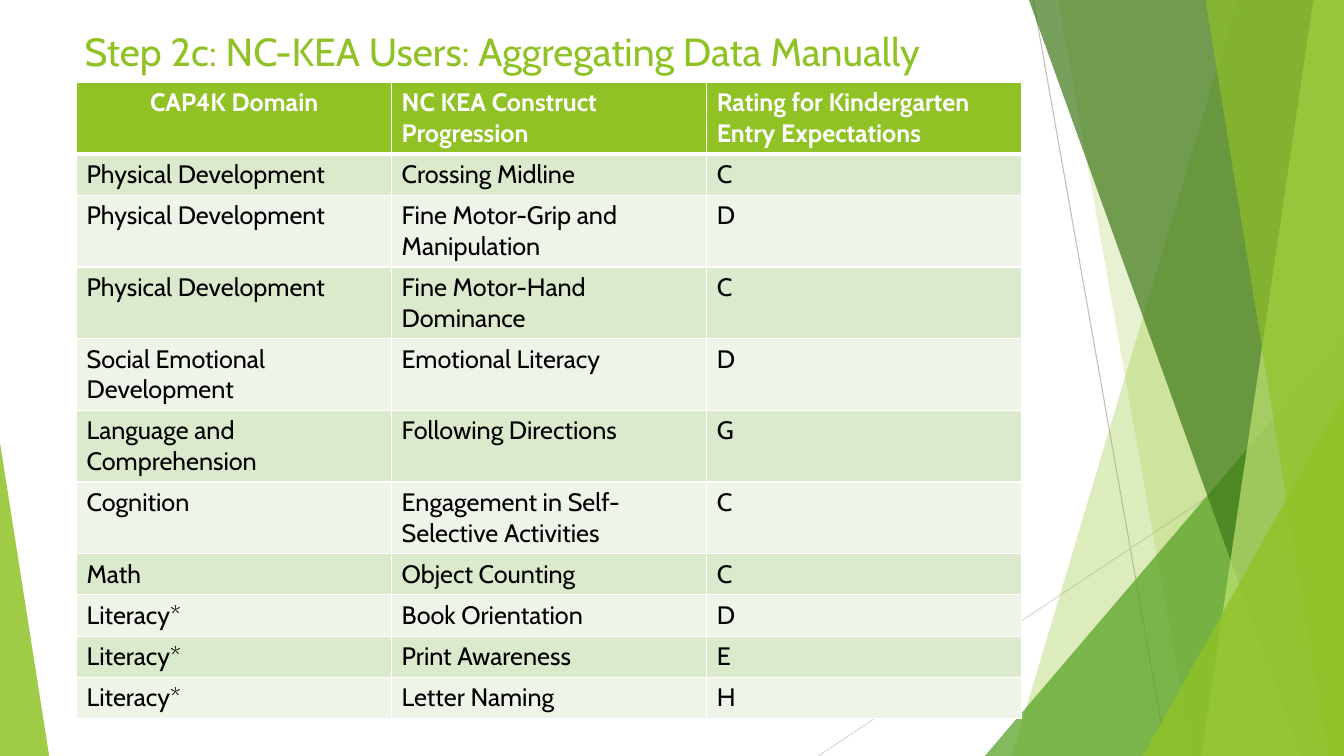
from pptx import Presentation
from pptx.dml.color import RGBColor
from pptx.enum.shapes import MSO_CONNECTOR, MSO_SHAPE
from pptx.enum.text import MSO_ANCHOR, MSO_AUTO_SIZE, PP_ALIGN
from pptx.oxml import parse_xml
from pptx.oxml.ns import nsdecls
from pptx.oxml.xmlchemy import OxmlElement
from pptx.util import Cm, Pt

THEME = {
    "font": "Cabin",
    "title_size": 28,
    "table_size": 18,
    "green": "90C226",
    "mid_green": "54A021",
    "dark_green": "3F7819",
    "light_green": "C0E474",
    "odd_row": "DBE9CD",
    "even_row": "EEF4E8",
    "white": "FFFFFF",
    "black": "000000",
    "line": "BFBFBF",
    "pale_line": "D9D9D9",
}
WIDTH, HEIGHT = 33.87, 19.05


def format_text(paragraph, size, color, bold=False):
    for run in paragraph.runs:
        run.font.name = THEME["font"]
        run.font.size = Pt(THEME[size])
        run.font.bold = bold
        run.font.color.rgb = RGBColor.from_string(THEME[color])


def paint(shape, color, opacity):
    shape.shadow.inherit = False
    shape.line.fill.background()
    shape.fill.solid()
    shape.fill.fore_color.rgb = RGBColor.from_string(THEME[color])
    alpha = OxmlElement("a:alpha")
    alpha.set("val", str(opacity * 1000))
    shape.fill._xPr.solidFill[0].append(alpha)


presentation = Presentation()
presentation.slide_width = Cm(WIDTH)
presentation.slide_height = Cm(HEIGHT)
slide = presentation.slides.add_slide(presentation.slide_layouts[5])
shapes = slide.shapes

rays = [
    (26.04, 0, 29.41, HEIGHT, "line"),
    (WIDTH, 10.24, 20.62, HEIGHT, "pale_line"),
]
for start_x, start_y, end_x, end_y, color in rays:
    ray = shapes.add_connector(
        MSO_CONNECTOR.STRAIGHT, Cm(start_x), Cm(start_y), Cm(end_x), Cm(end_y))
    ray.line.color.rgb = RGBColor.from_string(THEME[color])
    ray.line.width = Pt(0.75)
    ray.element.spPr.append(OxmlElement("a:effectLst"))

facets = [
    ("band", (31.19, 25.5), "green", 30),
    ("band", (26.67, 30.05), "green", 20),
    ("triangle", (24.82, 8.46, 9.05, 1), "mid_green", 72),
    ("band", (25.93, 32.79), "dark_green", 70),
    ("band", (33.1, 30.28), "light_green", 70),
    ("band", (30.38, 33.48), "green", 65),
    ("triangle", (28.8, 9.98, 5.07, 1), "green", 80),
    ("triangle", (0, 11.15, 1.24, 0), "green", 85),
]
for kind, geometry, color, opacity in facets:
    if kind == "band":
        top_x, bottom_x = geometry
        builder = shapes.build_freeform(Cm(top_x), Cm(0))
        builder.add_line_segments(
            [(Cm(WIDTH), Cm(0)), (Cm(WIDTH), Cm(HEIGHT)), (Cm(bottom_x), Cm(HEIGHT))],
            close=True)
        facet = builder.convert_to_shape()
    else:
        left, top, width, apex = geometry
        facet = shapes.add_shape(
            MSO_SHAPE.ISOSCELES_TRIANGLE, Cm(left), Cm(top), Cm(width), Cm(HEIGHT - top))
        facet.adjustments[0] = apex
    paint(facet, color, opacity)

title = shapes.title
title.element.getparent().append(title.element)
title.left, title.top, title.width, title.height = Cm(1.88), Cm(0.56), Cm(23.88), Cm(3.66)
title.text_frame.text = "Step 2c: NC-KEA Users: Aggregating Data Manually"
title.text_frame.word_wrap = True
title.text_frame.auto_size = MSO_AUTO_SIZE.NONE
title.text_frame.vertical_anchor = MSO_ANCHOR.TOP
title_paragraph = title.text_frame.paragraphs[0]
title_paragraph.alignment = PP_ALIGN.LEFT
format_text(title_paragraph, "title_size", "green")

ratings = [
    ("CAP4K Domain", "NC KEA Construct Progression", "Rating for Kindergarten Entry Expectations"),
    ("Physical Development", "Crossing Midline", "C"),
    ("Physical Development", "Fine Motor-Grip and Manipulation", "D"),
    ("Physical Development", "Fine Motor-Hand Dominance", "C"),
    ("Social Emotional Development", "Emotional Literacy", "D"),
    ("Language and Comprehension", "Following Directions", "G"),
    ("Cognition", "Engagement in Self-Selective Activities", "C"),
    ("Math", "Object Counting", "C"),
    ("Literacy*", "Book Orientation", "D"),
    ("Literacy*", "Print Awareness", "E"),
    ("Literacy*", "Letter Naming", "H"),
]
single_line_rows = {1, 7, 8, 9, 10}
row_heights = [1.04 if row in single_line_rows else 1.78 for row in range(len(ratings))]
column_width = 7.94
table = shapes.add_table(
    len(ratings), 3, Cm(1.93), Cm(2.08), Cm(3 * column_width), Cm(sum(row_heights))).table
for column in table.columns:
    column.width = Cm(column_width)

for row_index, texts in enumerate(ratings):
    table.rows[row_index].height = Cm(row_heights[row_index])
    is_header = row_index == 0
    fill = "green" if is_header else "odd_row" if row_index % 2 else "even_row"
    borders = {"L": 1, "R": 1, "T": 3 if row_index == 1 else 1, "B": 3 if is_header else 1}
    for column_index, text in enumerate(texts):
        cell = table.cell(row_index, column_index)
        cell.text_frame.text = text
        paragraph = cell.text_frame.paragraphs[0]
        if is_header and column_index == 0:
            paragraph.alignment = PP_ALIGN.CENTER
        format_text(paragraph, "table_size", "white" if is_header else "black", is_header)
        properties = cell._tc.get_or_add_tcPr()
        for side, points in borders.items():
            properties.append(parse_xml(
                f'<a:ln{side} {nsdecls("a")} w="{Pt(points)}"><a:solidFill>'
                f'<a:srgbClr val="{THEME["white"]}"/></a:solidFill></a:ln{side}>'))
        cell.fill.solid()
        cell.fill.fore_color.rgb = RGBColor.from_string(THEME[fill])

presentation.save("out.pptx")
